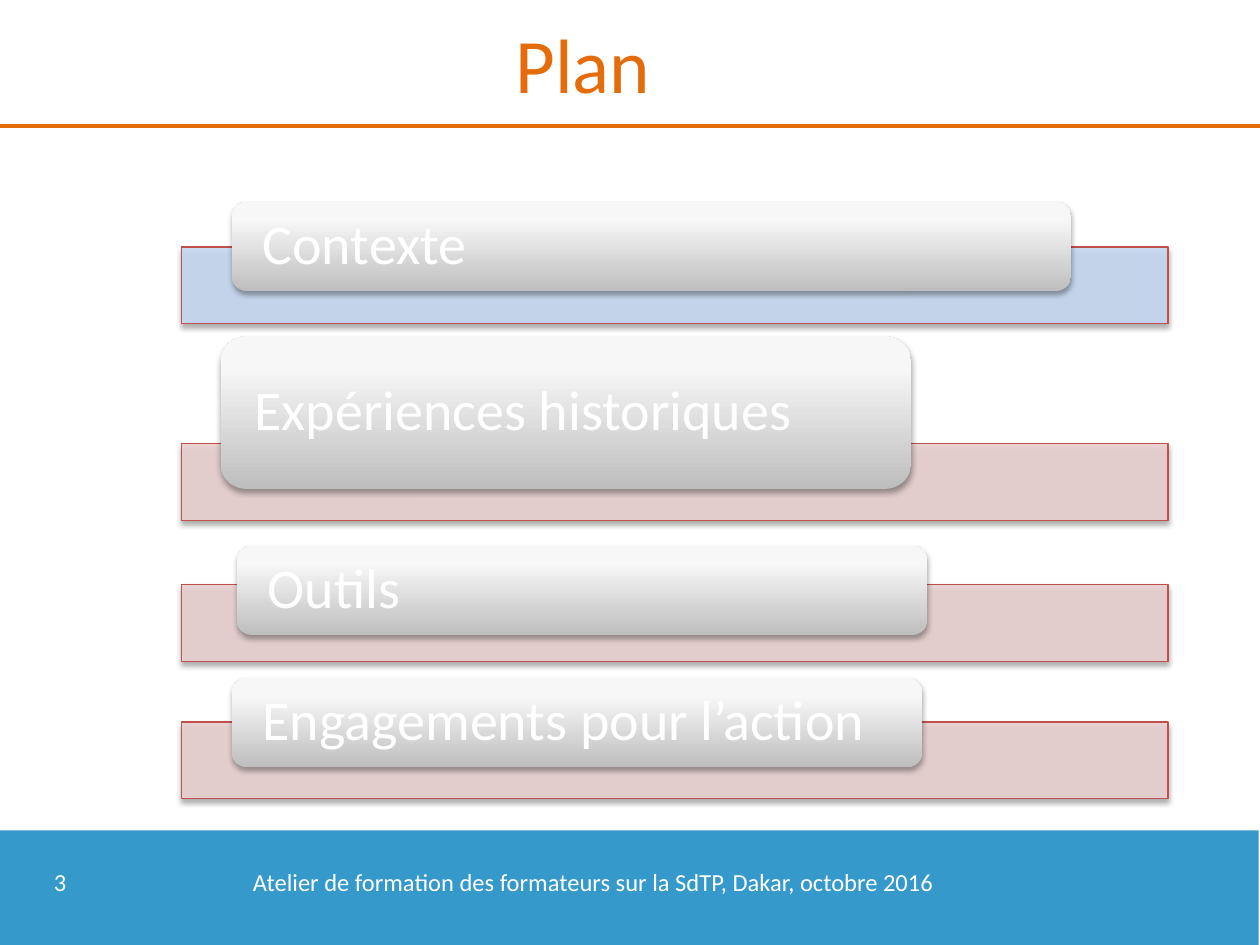
"""Build the "Plan" agenda slide with four stacked topic bars."""
import pptx
import pptx.util
import pptx.dml.color
import pptx.enum.shapes
import pptx.enum.text
import pptx.oxml
import pptx.oxml.ns
from lxml import etree

THEME = {
    "font": "Calibri", "title": 44, "topic": 32, "footer": 14,
    "orange": "E46C0A", "blue": "3599CC", "white": "FFFFFF",
    "first_bar": "C6D9F1", "bar": "E8D0D0", "bar_line": "C0504D",
    "gradient": [(0, "BEBEBE"), (80, "F7F7F7"), (100, "F8F8F8")],
}
NS = pptx.oxml.ns.nsdecls("a")
SHADOW = (f'<a:outerShdw {NS} blurRad="39370" dist="22860" dir="5400000" rotWithShape="0">'
          '<a:srgbClr val="000000"><a:alpha val="35000"/></a:srgbClr></a:outerShdw>')
STOPS = "".join(f'<a:gs pos="{pos * 1000}"><a:srgbClr val="{color}"/></a:gs>'
                for pos, color in THEME["gradient"])
GRADIENT = (f'<a:gradFill {NS} rotWithShape="1"><a:gsLst>{STOPS}</a:gsLst>'
            '<a:lin ang="16200000" scaled="0"/></a:gradFill>')

rgb = pptx.dml.color.RGBColor.from_string
SHAPE = pptx.enum.shapes.MSO_SHAPE
ALIGN = pptx.enum.text.PP_ALIGN
ANCHOR = pptx.enum.text.MSO_ANCHOR

deck = pptx.Presentation()
deck.slide_width = pptx.util.Inches(10)
deck.slide_height = pptx.util.Inches(7.5)
column = deck.slide_width / 100
row = deck.slide_height / 75
slide = deck.slides.add_slide(deck.slide_layouts[6])
shapes = slide.shapes


def place(left, top, width, height):
    """Turn grid columns and rows into slide lengths."""
    return [int(left * column), int(top * row), int(width * column), int(height * row)]


def write(holder, text, size, color, align, anchor):
    """Set and format a single paragraph, and return it."""
    frame = holder.text_frame
    frame.word_wrap = True
    frame.vertical_anchor = anchor
    frame.text = text
    paragraph = frame.paragraphs[0]
    paragraph.alignment = align
    font = paragraph.runs[0].font
    font.name, font.size = THEME["font"], pptx.util.Pt(size)
    font.color.rgb = rgb(color)
    return paragraph


footer_band = shapes.add_shape(SHAPE.RECTANGLE, *place(-0.1, 65.9, 100, 9.1))
footer_band.shadow.inherit = False
footer_band.fill.solid()
footer_band.fill.fore_color.rgb = rgb(THEME["blue"])
footer_band.line.fill.background()

title_rule = shapes.add_connector(pptx.enum.shapes.MSO_CONNECTOR.STRAIGHT,
                                  0, int(10 * row), deck.slide_width, int(10 * row))
title_rule.line.color.rgb = rgb(THEME["orange"])
title_rule.line.width = pptx.util.Pt(2.25)
etree.SubElement(title_rule._element.spPr, pptx.oxml.ns.qn("a:effectLst"))

captions = [
    ("3", (3.3, 68.3, 8.3, 4.8), "footer", "white", ALIGN.LEFT, ANCHOR.TOP),
    ("Plan", (0, 0, 92.5, 10), "title", "orange", ALIGN.CENTER, ANCHOR.MIDDLE),
    ("Atelier de formation des formateurs sur la SdTP, Dakar, octobre 2016",
     (12.5, 68.3, 69.2, 4.8), "footer", "white", ALIGN.CENTER, ANCHOR.TOP),
]
for text, area, size, color, align, anchor in captions:
    caption = shapes.add_textbox(*place(*area))
    write(caption, text, THEME[size], THEME[color], align, anchor)

topics = [
    ("Contexte", 19.6, "first_bar", (18.4, 16, 66.6, 7.1)),
    ("Expériences historiques", 35.2, "bar", (17.5, 26.7, 54.8, 12.1)),
    ("Outils", 46.4, "bar", (18.8, 43.3, 54.8, 7.1)),
    ("Engagements pour l’action", 57.3, "bar", (18.4, 53.8, 54.8, 7.1)),
]
for topic, bar_top, bar_color, label_area in topics:
    bar = shapes.add_shape(SHAPE.RECTANGLE, *place(14.4, bar_top, 78.3, 6.1))
    bar.fill.solid()
    bar.fill.fore_color.rgb = rgb(THEME[bar_color])
    bar_fill = bar._element.spPr.find(".//" + pptx.oxml.ns.qn("a:srgbClr"))
    etree.SubElement(bar_fill, pptx.oxml.ns.qn("a:alpha"), val="90000")
    bar.line.color.rgb = rgb(THEME["bar_line"])
    bar.line.width = pptx.util.Pt(0.75)

    label = shapes.add_shape(SHAPE.ROUNDED_RECTANGLE, *place(*label_area))
    label.line.fill.background()
    label._element.spPr.insert(2, pptx.oxml.parse_xml(GRADIENT))
    frame = label.text_frame
    frame.margin_left = frame.margin_right = int(2.1 * column)
    frame.margin_top = frame.margin_bottom = 0
    paragraph = write(label, topic, THEME["topic"], THEME["white"], ALIGN.LEFT, ANCHOR.MIDDLE)
    paragraph.line_spacing = 0.9

    for part in (bar, label):
        part.shadow.inherit = False
        effects = part._element.spPr.find(pptx.oxml.ns.qn("a:effectLst"))
        effects.append(pptx.oxml.parse_xml(SHADOW))

deck.save("out.pptx")
